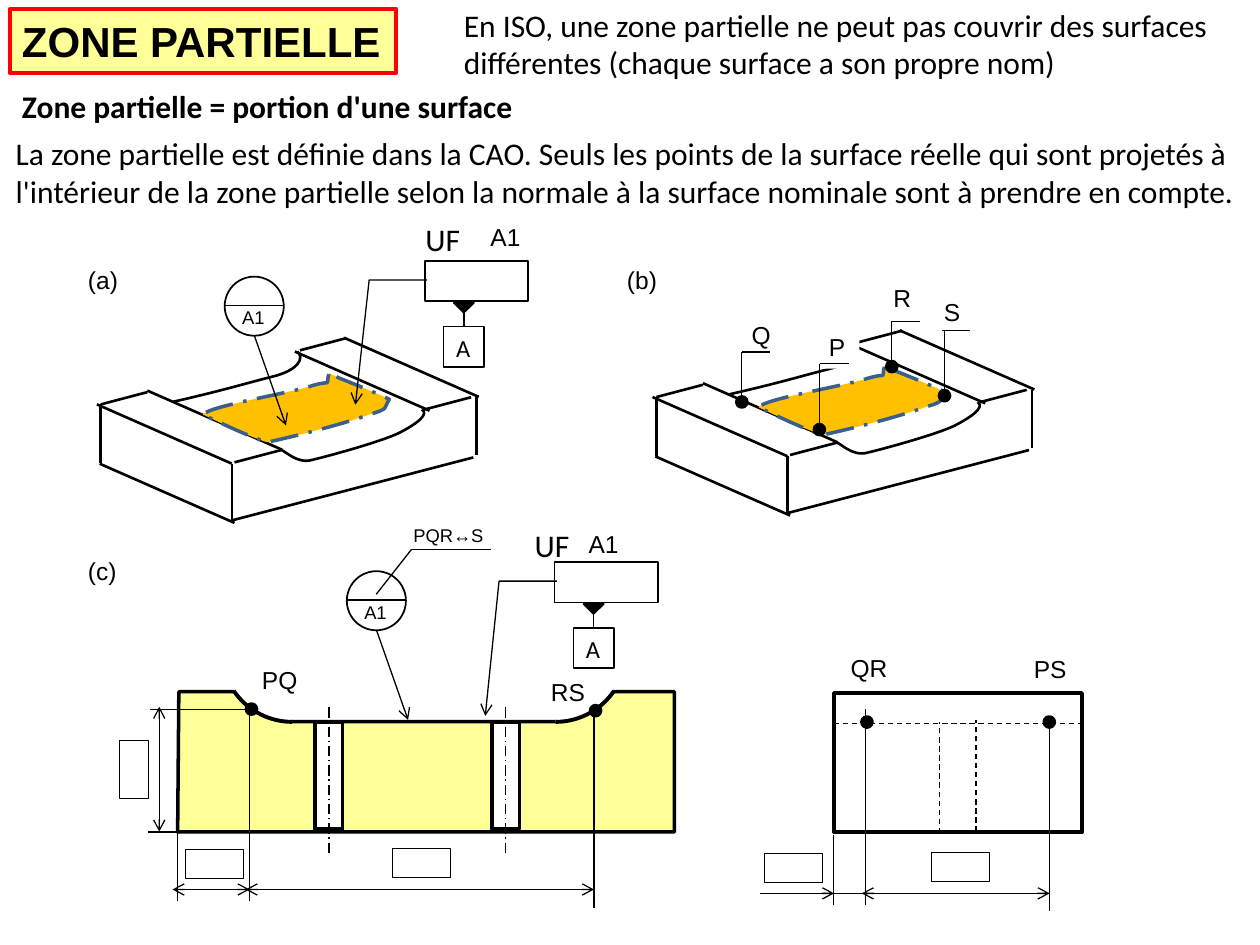
"""Build the slide explaining partial zones (zone partielle) in ISO drawings."""
from lxml.etree import SubElement
from pptx import Presentation
from pptx.dml.color import RGBColor as RGB
from pptx.enum.dml import MSO_LINE as DASH
from pptx.enum.shapes import MSO_CONNECTOR as CONN, MSO_SHAPE as SHAPE
from pptx.enum.text import MSO_ANCHOR as ANCHOR, MSO_AUTO_SIZE as AUTO, PP_ALIGN as ALIGN
from pptx.oxml.ns import qn
from pptx.util import Pt

THEME = {
    "ink": "000000", "paper": "FFFFFF", "part": "FFFF99", "zone": "FFC000",
    "zone_edge": "3A5F8C", "alert": "FF0000",
    "title": {"size": 24, "name": "Arial", "bold": True},
    "body": {"size": 18, "name": "Calibri"},
    "strong": {"size": 18, "name": "Calibri", "bold": True},
    "label": {"size": 14, "name": "Arial"},
    "datum": {"size": 14, "name": "Calibri"},
    "small": {"size": 10.5, "name": "Arial"},
}

TITLE = ("ZONE PARTIELLE", (5.5, 5.3, 221, 36.4), "title")
TEXTS = [
    ("UF", (236, 122.2, 34.6, 28.8), "body", False),
    ("En ISO, une zone partielle ne peut pas couvrir des surfaces différentes "
     "(chaque surface a son propre nom)", (258, -0.3, 444.2, 51), "body", True),
    ("UF", (298.5, 297, 44, 28.8), "body", True),
    ("Zone partielle = portion d'une surface", (5.5, 46, 297.4, 28.8), "strong", False),
    ("La zone partielle est définie dans la CAO. Seuls les points de la surface réelle "
     "qui sont projetés à l'intérieur de la zone partielle selon la normale à la surface "
     "nominale sont à prendre en compte.", (1.9, 73, 717.8, 51), "body", True),
    ("A1", (273.2, 123.1, 31.7, 24.5), "label", False),
    ("A1", (329.3, 298.8, 31.7, 24.5), "label", False),
    ("PQR↔S", (229.2, 295.9, 55.4, 20.2), "small", False),
    ("PQ", (142.6, 376.6, 35.3, 24.5), "label", False),
    ("RS", (307.7, 383.3, 34.6, 24.5), "label", False),
    ("PS", (583.7, 370.1, 33.1, 24.5), "label", False),
    ("QR", (479, 369.4, 36, 24.5), "label", False),
    ("(a)", (43.2, 148, 31.7, 24.5), "label", False),
    ("(b)", (351.2, 148, 31.7, 24.5), "label", False),
    ("(c)", (43.2, 314.2, 31.7, 24.5), "label", False),
]

PROFILE = [(102.2, 395.3), (135.4, 395.3), (167, 412.4), (317.5, 412.4),
           (350.4, 395.3), (385.4, 395.3), (385.4, 475.4), (101.5, 475.4)]
FILLETS = [(126.7, 54, 87.43), (277.2, 20.57, 54)]
HOLES = [180, 281]
SIDE_VIEW = (476.6, 396, 141.8, 79.6)

BLOCK_EDGES = {
    (77, 33.8): [(84.2, 223.2), (55.4, 231.1), (168.5, 200.9), (196.6, 193), (57, 265)],
    (26.6, -7): [(57.6, 231.1), (134, 264.2), (171.4, 200.2), (242.6, 234)],
    (0, 33.5): [(132.5, 265), (57.6, 231.1), (272.2, 226.8)],
    (138, -36): [(132.5, 297.4)],
}
BLOCK_CURVES = [
    [(169.9, 200.9), (174.2, 204.5), (170.6, 211.7), (155.5, 215.3),
     (141.1, 218.9), (127.4, 223.2), (98.6, 229.7)],
    [(241.2, 234), (245.5, 236.9), (237.6, 242.6), (227.5, 247.7),
     (216.7, 252.7), (187.9, 260.6), (178.6, 262.8),
     (169.2, 265.7), (162, 256.3), (159.8, 257)],
]
ZONE = [(187.9, 213.8), (185.8, 221.8), (190.8, 216.7), (178.6, 220.3),
        (166.3, 224.6), (120.2, 231.8), (115.9, 236.9),
        (126.7, 241.9), (139.7, 248.4), (152.6, 252.7),
        (172.8, 248.4), (199.4, 241.2), (211, 236.9),
        (223.2, 233.3), (218.9, 233.3), (222.5, 228.2),
        (215.3, 224.6), (199.4, 218.2), (193.7, 216), (187.9, 213.1)]
BLOCKS = [(0, 0), (317.5, -4.2)]

CALLOUTS = [(128.4, 158.1), (198.2, 326.4)]
DATUMS = [(242.7, 149.2, 71.3), (316.9, 321.3, 77)]
CORNERS = [
    ("P", (466.6, 186.2), (468.7, 207.9), (468.2, 245.5)),
    ("Q", (422.4, 179.3), (424.1, 201.1), (423.9, 229.7)),
    ("R", (503.5, 158.4), (509.8, 183.6), (509.6, 209.5)),
    ("S", (532.3, 166.3), (538.3, 188.8), (539.7, 226.1)),
]
DOTS = [(599.6, 412.6), (495.4, 412.6), (340.3, 406.1), (143.7, 405.2)]

HIDDEN = [(476.6, 413.3, 618.5, 413.3), (536.9, 475.9, 536.9, 412.6), (557.8, 475.2, 557.8, 411.4)]
THIN = [
    (235.2, 313.9, 280.8, 313.9), (235.2, 313.9, 215, 339.6),
    (142.6, 403.9, 142.6, 514.8), (339.4, 407.5, 339.4, 519.1),
    (101.5, 475.4, 101.5, 514.8), (494.6, 405.4, 494.6, 517),
    (599.8, 409.7, 599.8, 520.6), (476.4, 477.4, 476.4, 517),
    (140.4, 405.4, 85.9, 405.4), (139, 475.4, 84.5, 475.4),
    (519.1, 510.5, 465.8, 510.5),
]
DIMENSIONS = [(339.4, 508.3, 140.4, 508.3), (142.6, 508.3, 98.6, 508.3),
              (599.8, 510.5, 492.5, 510.5), (91, 475.2, 91, 403.9)]
DIMENSION_FRAMES = [(224.1, 485.1, 0), (105.8, 485.5, 0), (532.4, 487, 0),
                    (437, 487.6, 0), (59.8, 431.3, 270)]


def color(name):
    return RGB.from_string(THEME[name])


def put(obj, values):
    for key, value in values.items():
        setattr(obj, key, value)


def stroke(s, width, ink="ink", dash=None, ends=()):
    s.line.color.rgb = color(ink)
    put(s.line, {"width": Pt(width), "dash_style": dash})
    for end in ends:
        SubElement(s.line._get_or_add_ln(), qn(f"a:{end}End"), type="arrow")


def finish(s, fill=None, width=None, **line):
    s.shadow.inherit = False
    if fill:
        s.fill.solid()
        s.fill.fore_color.rgb = color(fill)
    else:
        s.fill.background()
    if width:
        stroke(s, width, **line)
    else:
        s.line.fill.background()
    return s


def shape(kind, box, fill=None, width=None, **line):
    return finish(shapes.add_shape(kind, *map(Pt, box)), fill, width, **line)


def line(x1, y1, x2, y2, width=0.75, parent=None, **style):
    s = (parent or shapes).add_connector(CONN.STRAIGHT, *map(Pt, (x1, y1, x2, y2)))
    stroke(s, width, **style)
    SubElement(s._element.spPr, qn("a:effectLst"))
    return s


def outline(points, close=False, parent=None, **style):
    start, *rest = [(Pt(x), Pt(y)) for x, y in points]
    builder = (parent or shapes).build_freeform(*start)
    builder.add_line_segments(rest, close=close)
    return finish(builder.convert_to_shape(), **style)


def curve(points, parent, **style):
    s = outline(points, parent=parent, **style)
    steps = list(s._element.iter(qn("a:lnTo")))
    for i in range(0, len(steps) - 2, 3):
        first, *others = steps[i:i + 3]
        first.tag = qn("a:cubicBezTo")
        for step in others:
            first.append(step[0])
            step.getparent().remove(step)


def write(s, text, style, wrap=False):
    tf = s.text_frame
    put(tf, {"word_wrap": wrap, "auto_size": AUTO.SHAPE_TO_FIT_TEXT,
             "vertical_anchor": ANCHOR.TOP})
    p = tf.paragraphs[0]
    p.alignment = ALIGN.LEFT
    r = p.add_run()
    r.text = text
    put(r.font, {**THEME[style], "size": Pt(THEME[style]["size"])})
    r.font.color.rgb = color("ink")


def label(text, box, style, wrap=False):
    write(shapes.add_textbox(*map(Pt, box)), text, style, wrap)


def block(dx, dy):
    group = shapes.add_group_shape().shapes
    for (w, h), starts in BLOCK_EDGES.items():
        for x, y in starts:
            line(x + dx, y + dy, x + w + dx, y + h + dy, 1.5, group)
    for points, style in [*((c, {"width": 1.5}) for c in BLOCK_CURVES),
                          (ZONE, {"fill": "zone", "width": 2, "ink": "zone_edge",
                                  "dash": DASH.LONG_DASH_DOT})]:
        curve([(x + dx, y + dy) for x, y in points], group, **style)


def callout(x, y):
    shape(SHAPE.OVAL, (x, y, 33.8, 33.8), width=1)
    line(x, y + 16.4, x + 33.8, y + 16.4)
    label("A1", (x + 2.9, y + 13.3, 28, 20.9), "small")
    line(x + 17, y + 33.8, x + 35, y + 85)


def datum(x, y, drop):
    shape(SHAPE.RECTANGLE, (x, y, 59, 23), width=1)
    box = (x + 10.8, y + 37.4, 23, 23)
    frame = shape(SHAPE.RECTANGLE, box, width=1)
    line(x + 22.3, y + 37.4, x + 22.3, y + 26.6, 1).begin_connect(frame, 0)
    outline([(x + 16.6, y + 23.8), (x + 28.1, y + 23.8), (x + 22.3, y + 29.5)],
            True, fill="ink", width=1)
    label("A", box, "datum")
    outline([(x + 1.4, y + 10.8), (x - 31.7, y + 10.8), (x - 39.6, y + 10.8 + drop)],
            width=0.75, ends=["tail"])


def dot(x, y):
    shape(SHAPE.OVAL, (x - 2.9, y - 2.9, 5.8, 5.8), "ink", 2)


prs = Presentation()
put(prs, {"slide_width": Pt(720), "slide_height": Pt(540)})
shapes = prs.slides.add_slide(prs.slide_layouts[6]).shapes

outline(PROFILE, True, fill="part", width=2)
for offset in BLOCKS:
    block(*offset)
for x, start, end in FILLETS:
    arc = shape(SHAPE.ARC, (x, 331.9, 80.6, 80.6), "paper", 2.25)
    arc.adjustments[0], arc.adjustments[1] = start, end
for x in HOLES:
    shape(SHAPE.RECTANGLE, (x, 412.6, 15.8, 61.2), "paper", 2)
    line(x + 8, 487.4, x + 8, 403.9, dash=DASH.LONG_DASH_DOT)
for corner in CALLOUTS:
    callout(*corner)
    stroke(shapes[-1], 0.75, ends=["tail"])
for text, (x, y), *_ in CORNERS:
    write(shape(SHAPE.RECTANGLE, (x, y, 24.5, 24.5), "paper"), text, "label")
for place in DATUMS:
    datum(*place)
shape(SHAPE.RECTANGLE, SIDE_VIEW, width=2)
for ends in THIN:
    line(*ends)
for ends in HIDDEN:
    line(*ends, dash=DASH.DASH)
for ends in DIMENSIONS:
    line(*ends, ends=["head", "tail"])
line(434.2, 510.5, 476.6, 510.5, ends=["tail"])
for x, y, angle in DIMENSION_FRAMES:
    shape(SHAPE.RECTANGLE, (x, y, 33.1, 16.6), width=0.5).rotation = angle
for _, _, (left, shelf), (x, y) in CORNERS:
    line(left, shelf, left + 16.2, shelf)
    line(x, shelf, x, y)
    dot(x, y)
for center in DOTS:
    dot(*center)
text, box, style = TITLE
write(shape(SHAPE.RECTANGLE, box, "part", 2.25, ink="alert"), text, style)
for item in TEXTS:
    label(*item)
prs.save("out.pptx")
